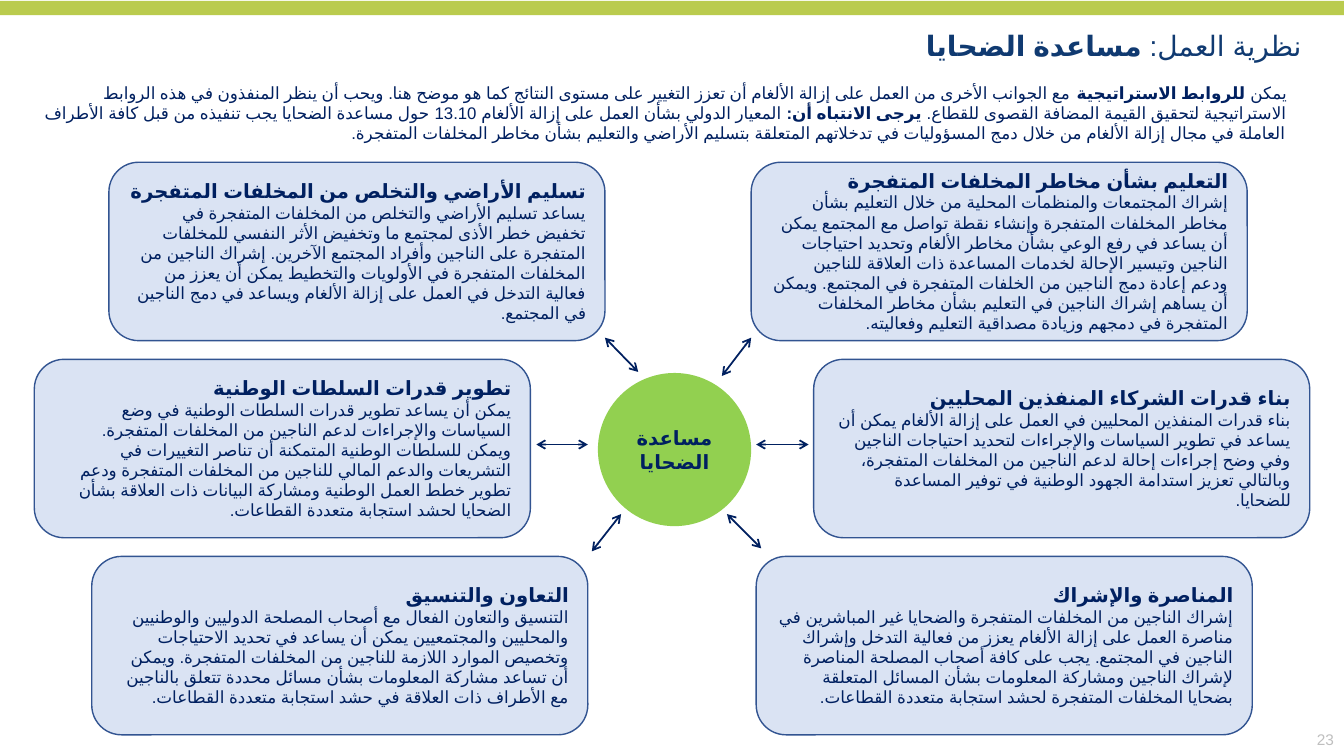
from lxml import etree
from pptx import Presentation
from pptx.dml.color import RGBColor
from pptx.enum.lang import MSO_LANGUAGE_ID
from pptx.enum.shapes import MSO_CONNECTOR, MSO_SHAPE
from pptx.enum.text import MSO_ANCHOR, MSO_AUTO_SIZE, PP_ALIGN
from pptx.oxml.ns import qn
from pptx.util import Pt

TITLE = [("نظرية العمل: ", False), ("مساعدة الضحايا", True)]
INTRO = [
    ("يمكن ", False),
    ("للروابط الاستراتيجية", True),
    (" مع الجوانب الأخرى من العمل على إزالة الألغام أن تعزز التغيير على مستوى النتائج كما هو موضح هنا. ويحب أن ينظر المنفذون في هذه الروابط الاستراتيجية لتحقيق القيمة المضافة القصوى للقطاع. ", False),
    ("يرجى الانتباه أن:", True),
    (" المعيار الدولي بشأن العمل على إزالة الألغام 13.10 حول مساعدة الضحايا يجب تنفيذه من قبل كافة الأطراف العاملة في مجال إزالة الألغام من خلال دمج المسؤوليات في تدخلاتهم المتعلقة بتسليم الأراضي والتعليم بشأن مخاطر المخلفات المتفجرة.", False),
]
HUB = "مساعدة الضحايا"
PAGE = "23"
PILLAR_ROWS = [
    [
        (108, "تسليم الأراضي والتخلص من المخلفات المتفجرة",
         "يساعد تسليم الأراضي والتخلص من المخلفات المتفجرة في تخفيض خطر الأذى لمجتمع ما وتخفيض الأثر النفسي للمخلفات المتفجرة على الناجين وأفراد المجتمع الآخرين. إشراك الناجين من المخلفات المتفجرة في الأولويات والتخطيط يمكن أن يعزز من فعالية التدخل في العمل على إزالة الألغام ويساعد في دمج الناجين في المجتمع."),
        (745, "التعليم بشأن مخاطر المخلفات المتفجرة",
         "إشراك المجتمعات والمنظمات المحلية من خلال التعليم بشأن مخاطر المخلفات المتفجرة وإنشاء نقطة تواصل مع المجتمع يمكن أن يساعد في رفع الوعي بشأن مخاطر الألغام وتحديد احتياجات الناجين وتيسير الإحالة لخدمات المساعدة ذات العلاقة للناجين ودعم إعادة دمج الناجين من الخلفات المتفجرة في المجتمع. ويمكن أن يساهم إشراك الناجين في التعليم بشأن مخاطر المخلفات المتفجرة في دمجهم وزيادة مصداقية التعليم وفعاليته."),
    ],
    [
        (34, "تطوير قدرات السلطات الوطنية",
         "يمكن أن يساعد تطوير قدرات السلطات الوطنية في وضع السياسات والإجراءات لدعم الناجين من المخلفات المتفجرة. ويمكن للسلطات الوطنية المتمكنة أن تناصر التغييرات في التشريعات والدعم المالي للناجين من المخلفات المتفجرة ودعم تطوير خطط العمل الوطنية ومشاركة البيانات ذات العلاقة بشأن الضحايا لحشد استجابة متعددة القطاعات."),
        (807, "بناء قدرات الشركاء المنفذين المحليين",
         "بناء قدرات المنفذين المحليين في العمل على إزالة الألغام يمكن أن يساعد في تطوير السياسات والإجراءات لتحديد احتياجات الناجين وفي وضح إجراءات إحالة لدعم الناجين من المخلفات المتفجرة، وبالتالي تعزيز استدامة الجهود الوطنية في توفير المساعدة للضحايا."),
    ],
    [
        (91, "التعاون والتنسيق",
         "التنسيق والتعاون الفعال مع أصحاب المصلحة الدوليين والوطنيين والمحليين والمجتمعيين يمكن أن يساعد في تحديد الاحتياجات وتخصيص الموارد اللازمة للناجين من المخلفات المتفجرة. ويمكن أن تساعد مشاركة المعلومات بشأن مسائل محددة تتعلق بالناجين مع الأطراف ذات العلاقة في حشد استجابة متعددة القطاعات."),
        (750, "المناصرة والإشراك",
         "إشراك الناجين من المخلفات المتفجرة والضحايا غير المباشرين في مناصرة العمل على إزالة الألغام يعزز من فعالية التدخل وإشراك الناجين في المجتمع. يجب على كافة أصحاب المصلحة المناصرة لإشراك الناجين ومشاركة المعلومات بشأن المسائل المتعلقة بضحايا المخلفات المتفجرة لحشد استجابة متعددة القطاعات."),
    ],
]
ARROWS = [
    (600, 335, 633, 369), (532, 441, 583, 441), (750, 441, 802, 441),
    (745, 335, 716, 373), (721, 510, 755, 544), (616, 510, 587, 547),
]

NAVY = RGBColor(0x00, 0x20, 0x60)
TITLE_BLUE = RGBColor(0x10, 0x3A, 0x71)
LIME = RGBColor(0xBA, 0xCB, 0x4E)
GREEN = RGBColor(0x92, 0xD0, 0x50)
PALE_BLUE = RGBColor(0xDA, 0xE3, 0xF3)
OUTLINE_BLUE = RGBColor(0x32, 0x54, 0x91)
GREY = RGBColor(0xBF, 0xBF, 0xBF)
RIGHT, CENTER = PP_ALIGN.RIGHT, PP_ALIGN.CENTER
TOP, MIDDLE = MSO_ANCHOR.TOP, MSO_ANCHOR.MIDDLE
NO_AUTOSIZE = MSO_AUTO_SIZE.NONE
ROUNDED, RECT, CIRCLE = MSO_SHAPE.ROUNDED_RECTANGLE, MSO_SHAPE.RECTANGLE, MSO_SHAPE.FLOWCHART_CONNECTOR
STRAIGHT = MSO_CONNECTOR.STRAIGHT
ARABIC = MSO_LANGUAGE_ID.ARABIC

FONT = "Arial"
EMU_PER_PX = 9144
PILLAR_TOP, PILLAR_PITCH = 161, 195.5
PILLAR_WIDTH, PILLAR_HEIGHT = 492, 177


def px(*lengths):
    return [round(length * EMU_PER_PX) for length in lengths]


def set_frame(frame, anchor, insets):
    frame.word_wrap = True
    frame.auto_size = NO_AUTOSIZE
    frame.vertical_anchor = anchor
    frame.margin_left, frame.margin_top, frame.margin_right, frame.margin_bottom = px(*insets)


def write(paragraph, parts, size, color, align=RIGHT, rtl=True):
    paragraph.alignment = align
    if rtl:
        paragraph._p.get_or_add_pPr().set("rtl", "1")
    for words, bold in parts:
        run = paragraph.add_run()
        run.text = words
        run.font.size = Pt(size)
        run.font.bold = bold
        run.font.name = FONT
        run.font.language_id = ARABIC
        run.font.color.rgb = color
        etree.SubElement(run._r.get_or_add_rPr(), qn("a:cs"), typeface=FONT)


def add_block(kind, box, fill, outline=None):
    block = slide.shapes.add_shape(kind, *px(*box))
    block.shadow.inherit = False
    block.fill.solid()
    block.fill.fore_color.rgb = fill
    if outline is None:
        block.line.fill.background()
    else:
        block.line.color.rgb = outline
        block.line.width = Pt(1)
    return block


def add_pillar(left, top, heading, body):
    pillar = add_block(ROUNDED, (left, top, PILLAR_WIDTH, PILLAR_HEIGHT), PALE_BLUE, OUTLINE_BLUE)
    frame = pillar.text_frame
    set_frame(frame, MIDDLE, (12, 4, 10, 5))
    write(frame.paragraphs[0], [(heading, True)], 14, NAVY)
    write(frame.add_paragraph(), [(body, False)], 12, NAVY)


def add_arrow(ends):
    arrow = slide.shapes.add_connector(STRAIGHT, *px(*ends))
    arrow.line.color.rgb = NAVY
    arrow.line.width = Pt(1.25)
    outline = arrow.line._get_or_add_ln()
    for end in ("a:headEnd", "a:tailEnd"):
        etree.SubElement(outline, qn(end), type="arrow")
    etree.SubElement(arrow._element.spPr, qn("a:effectLst"))


deck = Presentation()
deck.slide_width, deck.slide_height = px(1333, 750)
slide = deck.slides.add_slide(deck.slide_layouts[5])

hub = add_block(CIRCLE, (593, 370, 152, 152), GREEN)
set_frame(hub.text_frame, MIDDLE, (0, 5, 0, 5))
write(hub.text_frame.paragraphs[0], [(HUB, True)], 14, NAVY, CENTER, rtl=False)

title = slide.shapes.title
title.left, title.top, title.width, title.height = px(39, 28, 1252, 34)
set_frame(title.text_frame, TOP, (0, 0, 0, 0))
write(title.text_frame.paragraphs[0], TITLE, 20, TITLE_BLUE)

add_block(RECT, (0, 1, 1333, 14), LIME)

for row, pillars in enumerate(PILLAR_ROWS):
    for left, heading, body in pillars:
        add_pillar(left, PILLAR_TOP + row * PILLAR_PITCH, heading, body)

intro = slide.shapes.add_textbox(*px(34, 77, 1252, 71))
set_frame(intro.text_frame, TOP, (10, 5, 10, 5))
write(intro.text_frame.paragraphs[0], INTRO, 12, NAVY)

for ends in ARROWS:
    add_arrow(ends)

page_number = slide.shapes.add_textbox(*px(1287, 717, 46, 33))
set_frame(page_number.text_frame, MIDDLE, (10, 5, 10, 5))
write(page_number.text_frame.paragraphs[0], [(PAGE, False)], 11, GREY, rtl=False)

deck.save("out.pptx")
